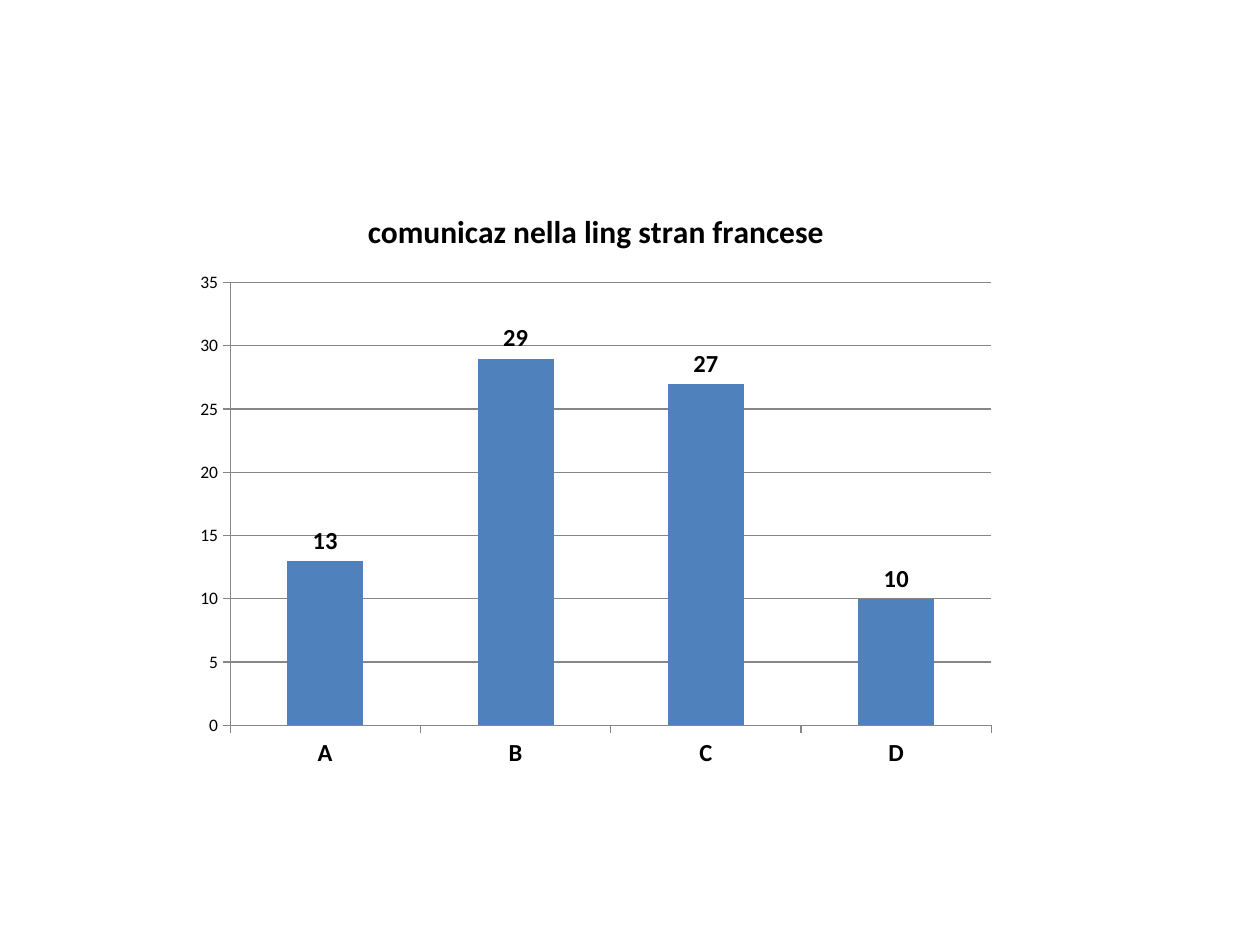
from pptx import Presentation
from pptx.chart.data import CategoryChartData
from pptx.dml.color import RGBColor
from pptx.enum.chart import XL_CHART_TYPE as ChartType
from pptx.enum.chart import XL_LABEL_POSITION as LabelPosition
from pptx.enum.chart import XL_TICK_MARK as TickMark
from pptx.util import Inches, Pt

TITLE = "comunicaz nella ling stran francese"
GRADES = {"A": 13, "B": 29, "C": 27, "D": 10}
CHART_BOX = (1.46, 1.47, 6.54, 4.72)
BAR, GRID, TEXT = "4F81BD", "868686", "000000"
FONTS = {
    "base": {"name": "Calibri", "size": Pt(10), "bold": False},
    "title": {"name": "Calibri", "size": Pt(18), "bold": True},
    "strong": {"name": "Calibri", "size": Pt(14), "bold": True},
}


def color(hex_value):
    return RGBColor.from_string(hex_value)


def style_font(font, style):
    for name, value in FONTS[style].items():
        setattr(font, name, value)
    font.color.rgb = color(TEXT)


def style_line(line):
    line.color.rgb = color(GRID)
    line.width = Pt(0.75)


def add_grade_chart(slide):
    data = CategoryChartData()
    data.categories = list(GRADES)
    data.add_series(TITLE, list(GRADES.values()))
    box = [Inches(length) for length in CHART_BOX]
    chart = slide.shapes.add_chart(ChartType.COLUMN_CLUSTERED, *box, data).chart
    style_font(chart.font, "base")
    chart.has_legend = False

    chart.has_title = True
    title_frame = chart.chart_title.text_frame
    title_frame.text = TITLE
    style_font(title_frame.paragraphs[0].runs[0].font, "title")
    chart.chart_title.include_in_layout = False

    for axis, style in ((chart.category_axis, "strong"), (chart.value_axis, "base")):
        axis.major_tick_mark = TickMark.OUTSIDE
        axis.minor_tick_mark = TickMark.NONE
        style_font(axis.tick_labels.font, style)
        style_line(axis.format.line)
    values = chart.value_axis
    values.minimum_scale, values.maximum_scale, values.major_unit = 0, 35, 5
    values.has_major_gridlines = True
    style_line(values.major_gridlines.format.line)

    plot = chart.plots[0]
    plot.gap_width = 150
    plot.vary_by_categories = False
    series = plot.series[0]
    series.format.fill.solid()
    series.format.fill.fore_color.rgb = color(BAR)
    labels = series.data_labels
    labels.show_value = True
    labels.position = LabelPosition.OUTSIDE_END
    style_font(labels.font, "strong")


def main():
    presentation = Presentation()
    presentation.slide_width, presentation.slide_height = Inches(10), Inches(7.5)
    slide = presentation.slides.add_slide(presentation.slide_layouts[6])
    add_grade_chart(slide)
    presentation.save("out.pptx")


if __name__ == "__main__":
    main()
